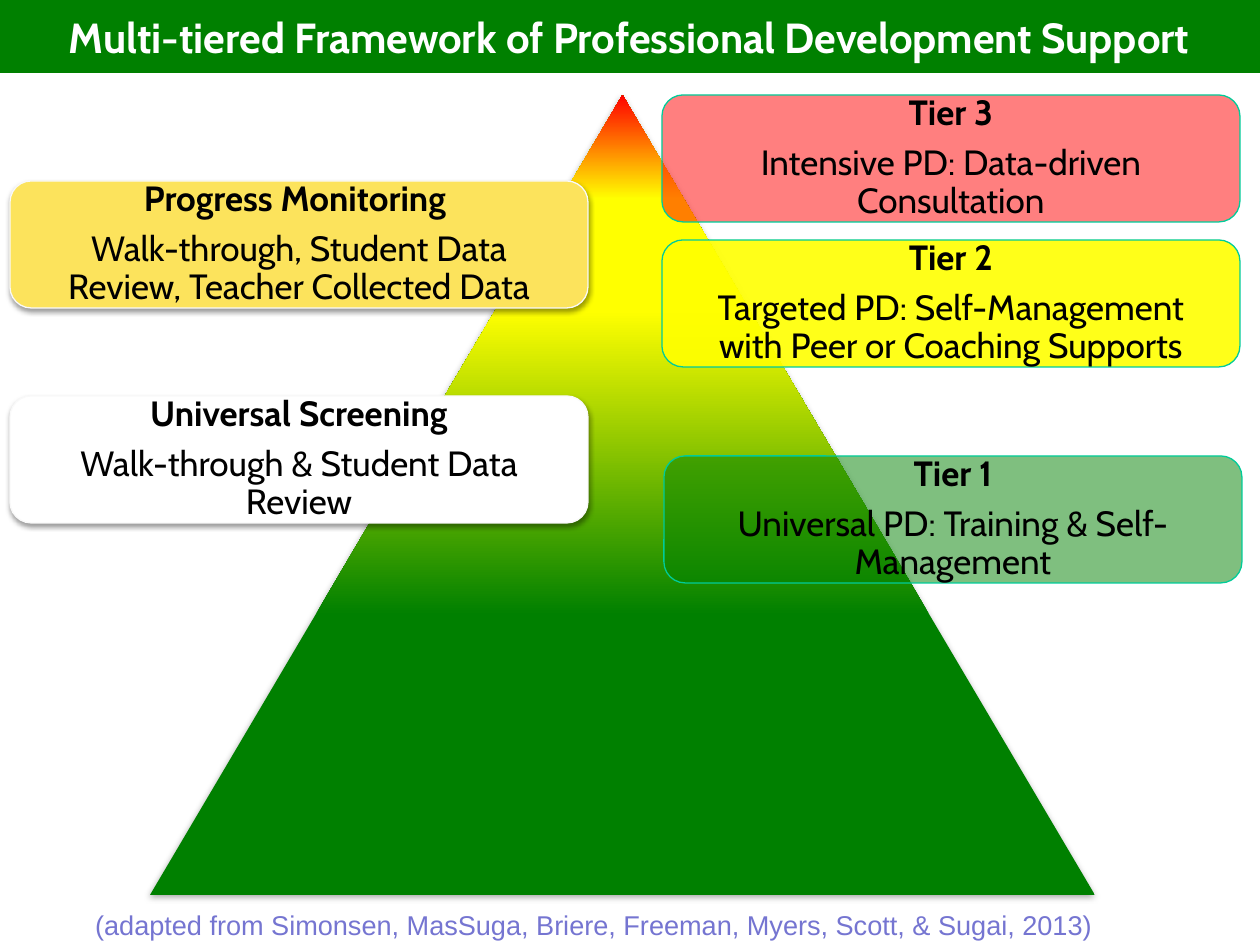
from pptx import Presentation
from pptx.dml.color import RGBColor
from pptx.enum.shapes import MSO_SHAPE
from pptx.enum.text import MSO_ANCHOR, PP_ALIGN
from pptx.oxml import parse_xml
from pptx.oxml.ns import nsdecls, qn
from pptx.util import Pt
from lxml import etree

EMU_PER_PX = 914400 / 126
SLIDE_SIZE = (1260, 945)

TRIANGLE = MSO_SHAPE.ISOSCELES_TRIANGLE
ROUNDED = MSO_SHAPE.ROUNDED_RECTANGLE
RECTANGLE = MSO_SHAPE.RECTANGLE
MIDDLE = MSO_ANCHOR.MIDDLE
CENTER = PP_ALIGN.CENTER

BLACK = RGBColor(0x00, 0x00, 0x00)
WHITE = RGBColor(0xFF, 0xFF, 0xFF)
RED = RGBColor(0xFF, 0x00, 0x00)
YELLOW = RGBColor(0xFF, 0xFF, 0x00)
GREEN = RGBColor(0x00, 0x80, 0x00)
GOLD = RGBColor(0xFC, 0xE3, 0x5C)
TEAL = RGBColor(0x00, 0xCC, 0x99)
PALE_GREY = RGBColor(0xF9, 0xF9, 0xF9)
LAVENDER = RGBColor(0x75, 0x75, 0xD1)

CARD_SIZE = (578, 127)
CARD_INSET = 16


def px(length):
    return round(length * EMU_PER_PX)


class SlideBuilder:
    heading_font = "Cabin"
    source_font = "Arial"

    def __init__(self, slide):
        self.slide = slide

    def shape(self, kind, left, top, width, height):
        shape = self.slide.shapes.add_shape(
            kind, px(left), px(top), px(width), px(height))
        shape.shadow.inherit = False
        shape.line.fill.background()
        return shape

    def soft_shadow(self, shape, opacity):
        effects = shape._element.spPr.find(qn("a:effectLst"))
        effects.append(parse_xml(
            f'<a:outerShdw {nsdecls("a")} blurRad="39370" dist="21590" '
            f'dir="5400000" rotWithShape="0"><a:srgbClr val="{BLACK}">'
            f'<a:alpha val="{opacity * 1000}"/></a:srgbClr></a:outerShdw>'))

    def add_span(self, para, text, font, size, color, bold=False):
        para.alignment = CENTER
        span = para.add_run()
        span.text = text
        span.font.name = font
        span.font.size = Pt(size)
        span.font.bold = bold
        span.font.color.rgb = color

    def pyramid(self, left, top, width, height, stops):
        shape = self.shape(TRIANGLE, left, top, width, height)
        shape.fill.gradient()
        shape.fill.gradient_angle = 90
        stop_list = shape._element.spPr.find(qn("a:gradFill")).find(qn("a:gsLst"))
        for stop in list(stop_list):
            stop_list.remove(stop)
        for position, color in stops:
            stop = etree.SubElement(stop_list, qn("a:gs"), pos=str(position * 1000))
            etree.SubElement(stop, qn("a:srgbClr"), val=str(color))
        self.soft_shadow(shape, 35)

    def card(self, left, top, heading, body, fill, outline, opacity=100, shadow=False):
        shape = self.shape(ROUNDED, left, top, *CARD_SIZE)
        shape.fill.solid()
        shape.fill.fore_color.rgb = fill
        if opacity < 100:
            color = shape._element.spPr.find(qn("a:solidFill"))[0]
            etree.SubElement(color, qn("a:alpha"), val=str(opacity * 1000))
        shape.line.color.rgb = outline
        shape.line.width = Pt(0.75)
        if shadow:
            self.soft_shadow(shape, 38)

        frame = shape.text_frame
        frame.word_wrap = True
        frame.vertical_anchor = MIDDLE
        frame.margin_left = frame.margin_right = px(CARD_INSET)
        frame.margin_top = frame.margin_bottom = px(CARD_INSET)
        for para, text, bold in ((frame.paragraphs[0], heading, True),
                                 (frame.add_paragraph(), body, False)):
            para.line_spacing = 0.9
            para.space_after = Pt(7)
            self.add_span(para, text, self.heading_font, 20, BLACK, bold)

    def title_bar(self, left, top, width, height, text):
        shape = self.shape(RECTANGLE, left, top, width, height)
        shape.fill.solid()
        shape.fill.fore_color.rgb = GREEN
        frame = shape.text_frame
        frame.word_wrap = True
        frame.vertical_anchor = MIDDLE
        self.add_span(frame.paragraphs[0], text, self.heading_font, 24, WHITE, True)

    def source_note(self, left, top, width, height, text):
        box = self.slide.shapes.add_textbox(px(left), px(top), px(width), px(height))
        box.text_frame.word_wrap = True
        self.add_span(box.text_frame.paragraphs[0], text, self.source_font, 15.5, LAVENDER)


def main():
    deck = Presentation()
    deck.slide_width, deck.slide_height = map(px, SLIDE_SIZE)
    builder = SlideBuilder(deck.slides.add_slide(deck.slide_layouts[6]))

    # Tier pyramid, coloured from the base up
    builder.pyramid(150, 95, 945, 800,
                    [(35, GREEN), (73, YELLOW), (87, YELLOW), (100, RED)])

    # Support tiers on the right
    tiers = [
        (662, 95, "Tier 3", "Intensive PD: Data-driven Consultation", RED, 50),
        (662, 240, "Tier 2",
         "Targeted PD: Self-Management with Peer or Coaching Supports", YELLOW, 90),
        (664, 456, "Tier 1", "Universal PD: Training & Self-Management", GREEN, 50),
    ]
    for left, top, heading, body, fill, opacity in tiers:
        builder.card(left, top, heading, body, fill, TEAL, opacity=opacity)

    # Assessment cards on the left
    assessments = [
        (181, "Progress Monitoring ",
         "Walk-through, Student Data Review, Teacher Collected Data", GOLD),
        (396, "Universal Screening", "Walk-through & Student Data Review", WHITE),
    ]
    for top, heading, body, fill in assessments:
        builder.card(10, top, heading, body, fill, PALE_GREY, shadow=True)

    # Source and title
    builder.source_note(
        0, 902, 1187, 45,
        "(adapted from Simonsen, MasSuga, Briere, Freeman, Myers, Scott, & Sugai, 2013)")
    builder.title_bar(-22, 0, 1302, 73,
                      "Multi-tiered Framework of Professional Development Support")

    deck.save("out.pptx")


if __name__ == "__main__":
    main()
